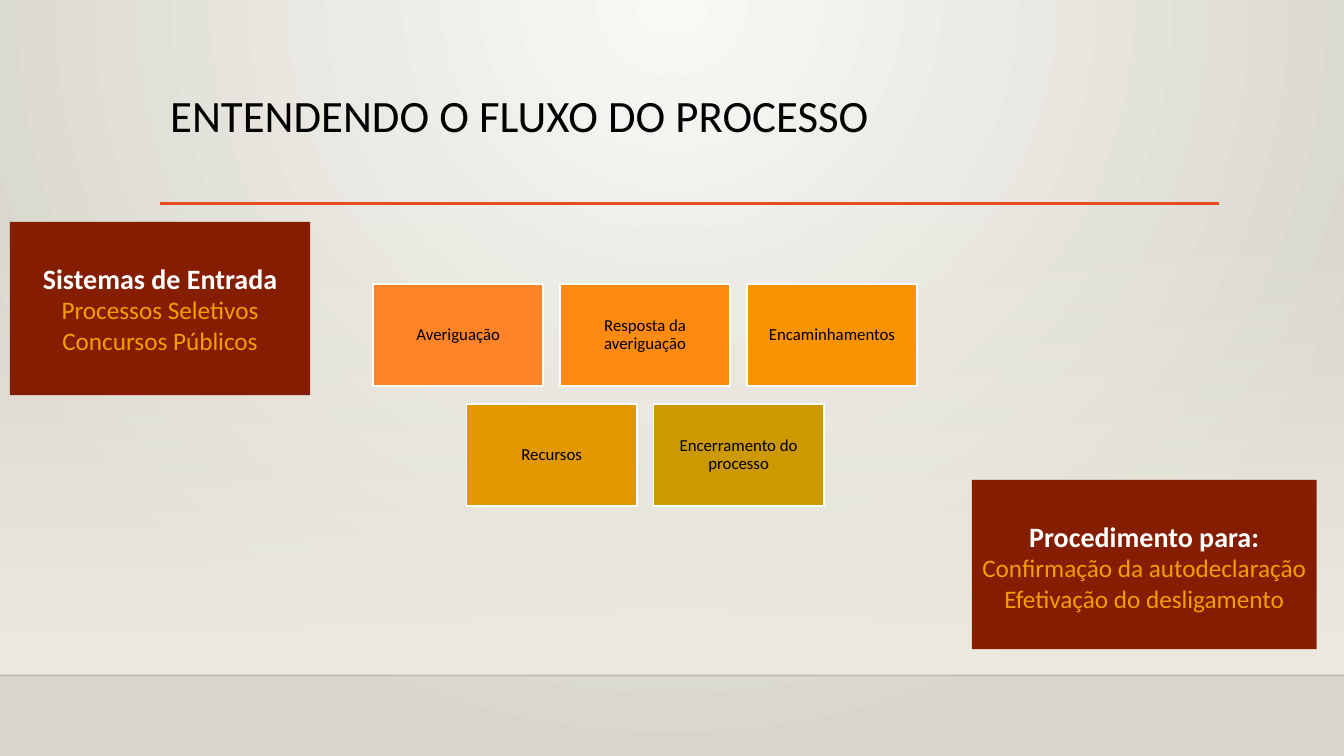
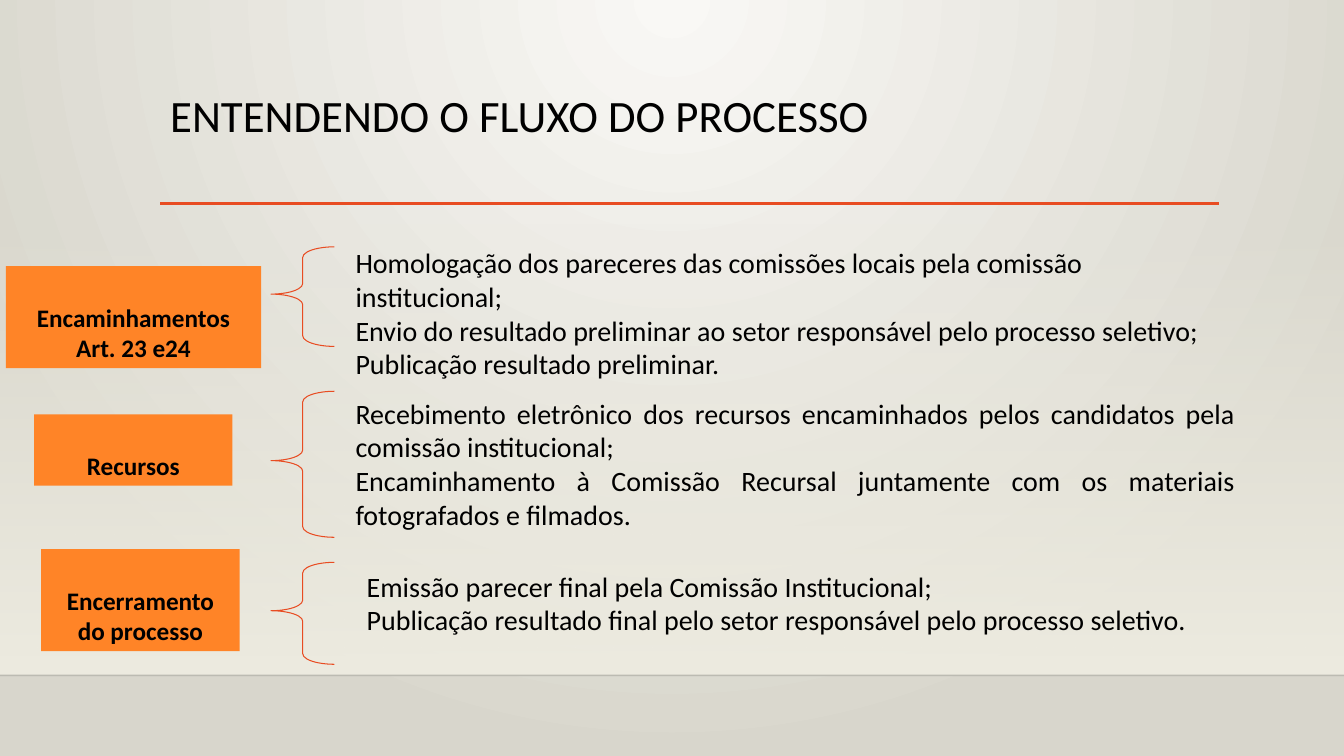
from dataclasses import dataclass

from lxml.etree import SubElement
from pptx import Presentation
from pptx.dml.color import RGBColor
from pptx.enum.shapes import MSO_CONNECTOR, MSO_SHAPE
from pptx.enum.text import MSO_ANCHOR, PP_ALIGN
from pptx.oxml.ns import qn
from pptx.presentation import Presentation as Deck
from pptx.shapes.autoshape import Shape
from pptx.slide import Slide
from pptx.text.text import TextFrame
from pptx.util import Cm, Pt

FONT = "Calibri"
TITLE = "ENTENDENDO O FLUXO DO PROCESSO"
PAGE_WIDTH, PAGE_HEIGHT = 33.87, 19.05
FLOOR = 17.02
COLORS = {
    "glow": "F9F8F5",
    "edge": "D8D6CC",
    "haze": "EEECE1",
    "floor": "000001",
    "accent": "E84C22",
    "dark": "851D00",
    "amber": "F49D00",
    "orange": "FF8427",
    "step 2": "FF8A10",
    "step 3": "F99300",
    "step 4": "E39800",
    "step 5": "CC9900",
    "black": "000000",
    "white": "FFFFFF",
}


@dataclass(frozen=True)
class Area:
    """A rectangle in centimetres."""
    left: float
    top: float
    width: float
    height: float

    def lengths(self) -> tuple[Cm, Cm, Cm, Cm]:
        return Cm(self.left), Cm(self.top), Cm(self.width), Cm(self.height)


@dataclass(frozen=True)
class Line:
    text: str
    size: int
    color: str = "black"
    bold: bool = False


@dataclass(frozen=True)
class Panel:
    area: Area
    heading: str
    items: tuple[str, ...]


@dataclass(frozen=True)
class Step:
    text: str
    fill: str


@dataclass(frozen=True)
class Stage:
    label_area: Area
    label: tuple[str, ...]
    brace_top: float
    brace_height: float
    detail_area: Area
    details: tuple[str, ...]
    align: PP_ALIGN = PP_ALIGN.LEFT


PANELS = (
    Panel(Area(0.25, 5.59, 7.57, 4.37), "Sistemas de Entrada",
          ("Processos Seletivos", "Concursos Públicos")),
    Panel(Area(24.49, 12.09, 8.69, 4.27), "Procedimento para:",
          ("Confirmação da autodeclaração", "Efetivação do desligamento")),
)
STEP_ROWS = (
    (Step("Averiguação", "orange"), Step("Resposta da averiguação", "step 2"),
     Step("Encaminhamentos", "step 3")),
    (Step("Recursos", "step 4"), Step("Encerramento do processo", "step 5")),
)
STAGES = (
    Stage(Area(0.15, 6.71, 6.43, 2.57), ("Encaminhamentos", "Art. 23 e24"), 6.22, 2.51,
          Area(8.71, 6.07, 22.66, 2.82),
          ("Homologação dos pareceres das comissões locais pela comissão institucional;",
           "Envio do resultado preliminar ao setor responsável pelo processo seletivo;",
           "Publicação resultado preliminar.")),
    Stage(Area(0.86, 10.44, 5, 1.8), ("Recursos",), 9.86, 3.68,
          Area(8.71, 9.86, 22.66, 3.68),
          ("Recebimento eletrônico dos recursos encaminhados pelos candidatos pela "
           "comissão institucional;",
           "Encaminhamento à Comissão Recursal juntamente com os materiais "
           "fotografados e filmados."),
          PP_ALIGN.JUSTIFY),
    Stage(Area(1.04, 13.84, 5, 2.57), ("Encerramento do processo",), 14.17, 2.57,
          Area(8.99, 14.22, 22.66, 1.96),
          ("Emissão parecer final pela Comissão Institucional;",
           "Publicação resultado final pelo setor responsável pelo processo seletivo.")),
)


def rgb(name: str) -> RGBColor:
    return RGBColor.from_string(COLORS[name])


def set_alpha(container, percent: int) -> None:
    """Set the opacity of the first colour inside an XML element."""
    color = next(container.iter(qn("a:srgbClr")))
    SubElement(color, qn("a:alpha"), val=str(percent * 1000))


def write(frame: TextFrame, lines: tuple[Line, ...], align: PP_ALIGN,
          spacing: float = 1.0) -> None:
    frame.word_wrap = True
    for index, line in enumerate(lines):
        para = frame.paragraphs[0] if index == 0 else frame.add_paragraph()
        para.text = line.text
        para.alignment = align
        para.line_spacing = spacing
        para.font.name = FONT
        para.font.size = Pt(line.size)
        para.font.bold = line.bold
        para.font.color.rgb = rgb(line.color)


def add_text(page: Slide, area: Area, lines: tuple[Line, ...],
             align: PP_ALIGN = PP_ALIGN.LEFT, spacing: float = 1.0) -> None:
    box = page.shapes.add_textbox(*area.lengths())
    write(box.text_frame, lines, align, spacing)


def add_box(page: Slide, area: Area, fill: str) -> Shape:
    box = page.shapes.add_shape(MSO_SHAPE.RECTANGLE, *area.lengths())
    box.shadow.inherit = False
    box.fill.solid()
    box.fill.fore_color.rgb = rgb(fill)
    box.line.fill.background()
    return box


def add_label(page: Slide, area: Area, fill: str, lines: tuple[Line, ...],
              top_inset: float) -> None:
    """Add a filled box whose centred text starts below a deep top inset."""
    frame = add_box(page, area, fill).text_frame
    frame.vertical_anchor = MSO_ANCHOR.TOP
    frame.margin_top = Cm(top_inset)
    write(frame, lines, PP_ALIGN.CENTER)


def add_rule(page: Slide, left: float, right: float, top: float, color: str,
             weight: float, opacity: int = 100) -> None:
    rule = page.shapes.add_connector(MSO_CONNECTOR.STRAIGHT, Cm(left), Cm(top),
                                     Cm(right), Cm(top))
    rule.line.width = Pt(weight)
    rule.line.color.rgb = rgb(color)
    if opacity < 100:
        set_alpha(rule.element, opacity)
    SubElement(rule.element.spPr, qn("a:effectLst"))


def set_background(deck: Deck) -> None:
    """Give the master a light glow that spreads from the top centre."""
    master = deck.slide_master
    fill = master.background.fill
    fill.gradient()
    for stop, name in zip(fill.gradient_stops, ("glow", "edge")):
        stop.color.rgb = rgb(name)
    gradient = next(master.element.iter(qn("a:gradFill")))
    gradient.remove(gradient.find(qn("a:lin")))
    circle = SubElement(gradient, qn("a:path"), path="circle")
    SubElement(circle, qn("a:fillToRect"), l="43000", t="0", r="43000", b="100000")


def add_page(deck: Deck) -> Slide:
    """Add a slide with the haze, the rules and the title."""
    page = deck.slides.add_slide(deck.slide_layouts[6])
    haze = add_box(page, Area(0, 5.61, PAGE_WIDTH, FLOOR - 5.61), "haze")
    haze.fill.gradient()
    haze.fill.gradient_angle = 270
    for stop in haze.fill.gradient_stops:
        stop.color.rgb = rgb("haze")
    set_alpha(haze.element.spPr, 0)
    add_rule(page, 0, PAGE_WIDTH, FLOOR, "floor", 1, opacity=20)
    add_rule(page, 4.04, 30.73, 5.13, "accent", 2.5)
    add_text(page, Area(4.04, 2.24, 26.67, 2.92), (Line(TITLE, 32),), spacing=0.9)
    return page


def add_steps(page: Slide) -> None:
    """Lay the steps out in rows that share one centre."""
    width, height, gap, center, top = 4.29, 2.57, 0.42, 16.26, 7.16
    for row, steps in enumerate(STEP_ROWS):
        left = center - (len(steps) * (width + gap) - gap) / 2
        for column, step in enumerate(steps):
            area = Area(left + column * (width + gap), top + row * (height + gap + 0.03),
                        width, height)
            box = add_box(page, area, step.fill)
            box.line.color.rgb = rgb("white")
            box.line.width = Pt(1.25)
            frame = box.text_frame
            frame.vertical_anchor = MSO_ANCHOR.MIDDLE
            frame.margin_left = frame.margin_right = Cm(0.13)
            write(frame, (Line(step.text, 12),), PP_ALIGN.CENTER, 0.9)


def add_stage(page: Slide, stage: Stage) -> None:
    area = Area(6.83, stage.brace_top, 1.6, stage.brace_height)
    brace = page.shapes.add_shape(MSO_SHAPE.LEFT_BRACE, *area.lengths())
    brace.shadow.inherit = False
    brace.adjustments[0], brace.adjustments[1] = 0.167, 0.475
    brace.fill.background()
    brace.line.color.rgb = rgb("accent")
    brace.line.width = Pt(0.75)
    label = tuple(Line(text, 18, bold=True) for text in stage.label)
    add_label(page, stage.label_area, "orange", label, 0.9)
    details = tuple(Line(text, 20) for text in stage.details)
    add_text(page, stage.detail_area, details, stage.align)


def main() -> None:
    deck = Presentation()
    deck.slide_width, deck.slide_height = Cm(PAGE_WIDTH), Cm(PAGE_HEIGHT)
    set_background(deck)

    overview = add_page(deck)
    for panel in PANELS:
        heading = Line(panel.heading, 20, "white", bold=True)
        items = tuple(Line(text, 18, "amber") for text in panel.items)
        add_label(overview, panel.area, "dark", (heading, *items), 0.99)
    add_steps(overview)

    breakdown = add_page(deck)
    for stage in STAGES:
        add_stage(breakdown, stage)

    deck.save("out.pptx")


if __name__ == "__main__":
    main()
